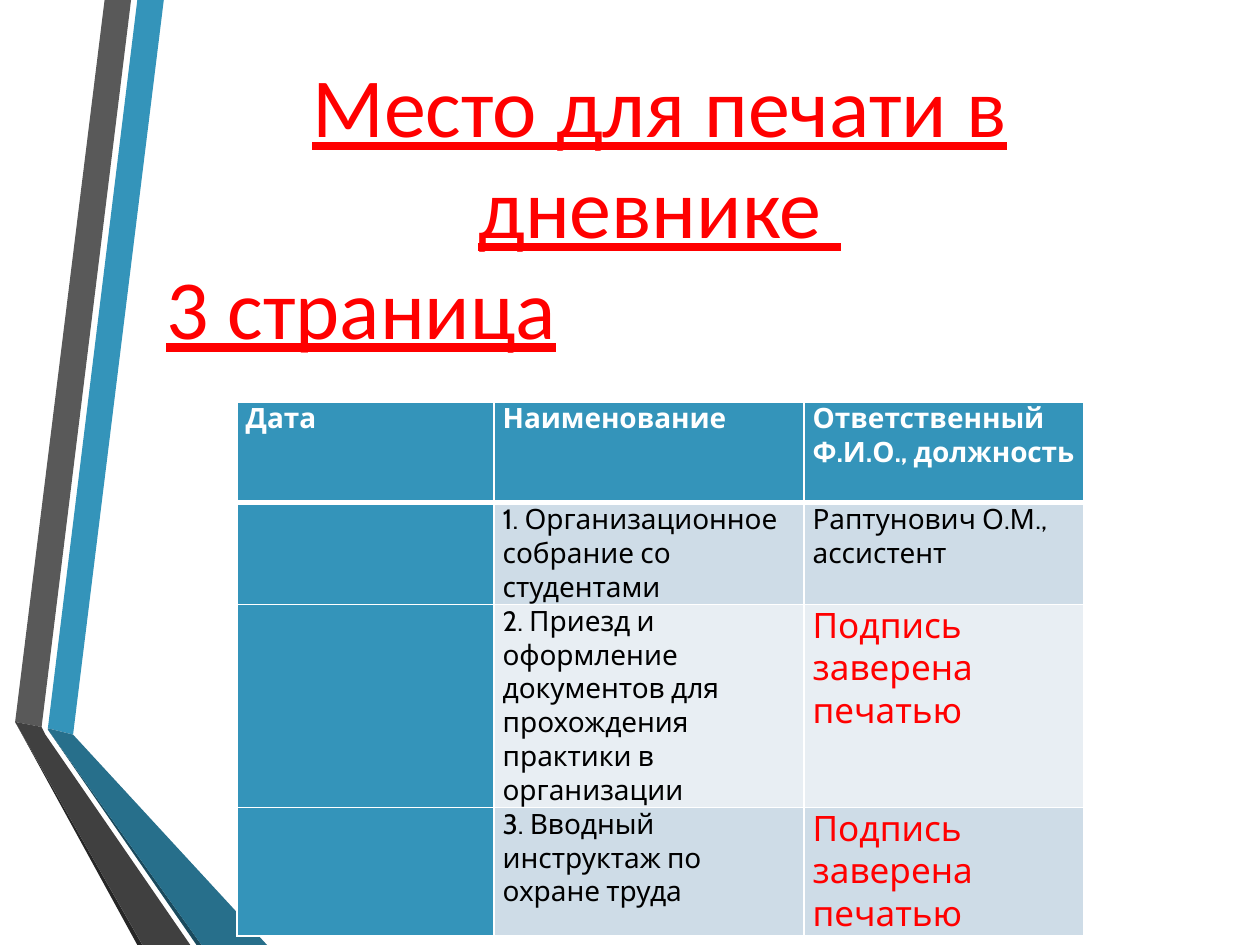
from dataclasses import dataclass

from lxml import etree
from pptx import Presentation
from pptx import util as u
from pptx.dml.color import RGBColor
from pptx.enum import text
from pptx.oxml.ns import qn

COLORS = {
    "blue": "3494BA", "blue_dark": "276F8B", "blue_edge": "1A4A5D",
    "gray": "595959", "gray_dark": "404040", "gray_edge": "262626",
    "band1": "CEDCE7", "band2": "E8EEF3",
    "red": "FF0000", "white": "FFFFFF", "black": "000000",
}


@dataclass
class Ribbon:
    color: str
    points: list[tuple[float, float]]


@dataclass
class CellStyle:
    fill: str
    color: str = "black"
    size: int = 16
    bold: bool = False


RIBBONS = [
    Ribbon("blue", [(0.38, 5.78), (0.58, 5.83), (1.3, 0), (1.09, 0)]),
    Ribbon("gray", [(1.04, 0), (0.83, 0), (0.12, 5.73), (0.33, 5.77)]),
    Ribbon("gray_edge", [(0.12, 5.73), (1.09, 7.5), (1.13, 7.5)]),
    Ribbon("blue_edge", [(0.38, 5.79), (1.56, 7.5), (1.6, 7.5)]),
    Ribbon("blue_dark", [(0.38, 5.79), (1.6, 7.5), (2.12, 7.5), (0.58, 5.83), (0.38, 5.78)]),
    Ribbon("gray_dark", [(1.51, 7.5), (0.36, 5.83), (0.33, 5.77), (0.12, 5.73), (1.13, 7.5)]),
]

ROWS = [
    ["Дата", "Наименование", "Ответственный\nФ.И.О., должность"],
    ["", "1. Организационное собрание со студентами", "Раптунович О.М., ассистент"],
    ["", "2. Приезд и оформление документов для прохождения практики в организации",
     "Подпись заверена печатью"],
    ["", "3. Вводный инструктаж по охране труда", "Подпись заверена печатью"],
]
COL_WIDTHS = [2.04, 2.46, 2.22]
ROW_HEIGHTS = [0.8, 0.8, 1.61, 1.02]


def rgb(name: str) -> RGBColor:
    return RGBColor.from_string(COLORS[name])


def draw_ribbon(s, ribbon: Ribbon) -> None:
    pts = [(u.Inches(x), u.Inches(y)) for x, y in ribbon.points]
    fb = s.shapes.build_freeform(*pts[0])
    fb.add_line_segments(pts[1:], close=True)
    sp = fb.convert_to_shape()
    sp.shadow.inherit = False
    sp.fill.solid()
    sp.fill.fore_color.rgb = rgb(ribbon.color)
    sp.line.fill.background()


def format_run(r, font: str, size: int, color: str) -> None:
    r.font.name = font
    r.font.size = u.Pt(size)
    r.font.color.rgb = rgb(color)


def draw_title(s) -> None:
    sp = s.shapes.title
    sp.left, sp.top, sp.width, sp.height = map(u.Inches, (1.22, 0.36, 8.03, 2.83))
    tf = sp.text_frame
    tf.text = "Место для печати в дневнике \n3 страница"
    tf.word_wrap = True
    tf.auto_size = text.MSO_AUTO_SIZE.NONE
    tf.vertical_anchor = text.MSO_ANCHOR.MIDDLE
    tf.margin_bottom = u.Inches(0.35)
    for p, align in zip(tf.paragraphs, (text.PP_ALIGN.CENTER, text.PP_ALIGN.LEFT)):
        p.alignment = align
        for r in p.runs:
            format_run(r, "Calibri", 48, "red")
            r.font.underline = True


def set_borders(cell, bottom: int, top: int) -> None:
    tcPr = cell._tc.get_or_add_tcPr()
    for side, width in (("L", 1), ("R", 1), ("T", top), ("B", bottom)):
        ln = etree.SubElement(tcPr, qn(f"a:ln{side}"), w=str(u.Pt(width)))
        fill = etree.SubElement(ln, qn("a:solidFill"))
        etree.SubElement(fill, qn("a:srgbClr"), val=COLORS["white"])


def cell_style(row: int, col: int) -> CellStyle:
    if row == 0:
        return CellStyle("blue", "white", bold=True)
    if col == 0:
        return CellStyle("blue")
    band = "band1" if row % 2 else "band2"
    if col == 2 and row > 1:
        return CellStyle(band, "red", 20)
    return CellStyle(band)


def fill_cell(cell, content: str, style: CellStyle) -> None:
    cell.margin_left = cell.margin_right = u.Inches(0.07)
    cell.margin_top = cell.margin_bottom = 0
    cell.fill.solid()
    cell.fill.fore_color.rgb = rgb(style.fill)
    cell.text_frame.text = content
    for p in cell.text_frame.paragraphs:
        for r in p.runs:
            format_run(r, "Cabin", style.size, style.color)
            r.font.bold = style.bold


def draw_table(s) -> None:
    table = s.shapes.add_table(
        len(ROWS), len(COL_WIDTHS), u.Inches(1.88), u.Inches(3.19),
        u.Inches(sum(COL_WIDTHS)), u.Inches(sum(ROW_HEIGHTS))).table
    table.horz_banding = False
    for col, width in zip(table.columns, COL_WIDTHS):
        col.width = u.Inches(width)
    for i, (row, height) in enumerate(zip(table.rows, ROW_HEIGHTS)):
        row.height = u.Inches(height)
        for j, cell in enumerate(row.cells):
            set_borders(cell, bottom=3 if i == 0 else 1, top=3 if i == 1 else 1)
            fill_cell(cell, ROWS[i][j], cell_style(i, j))


def main() -> None:
    prs = Presentation()
    prs.slide_width, prs.slide_height = u.Inches(10), u.Inches(7.5)
    s = prs.slides.add_slide(prs.slide_layouts[5])
    for ribbon in RIBBONS:
        draw_ribbon(s, ribbon)
    draw_table(s)
    draw_title(s)
    prs.save("out.pptx")


if __name__ == "__main__":
    main()
